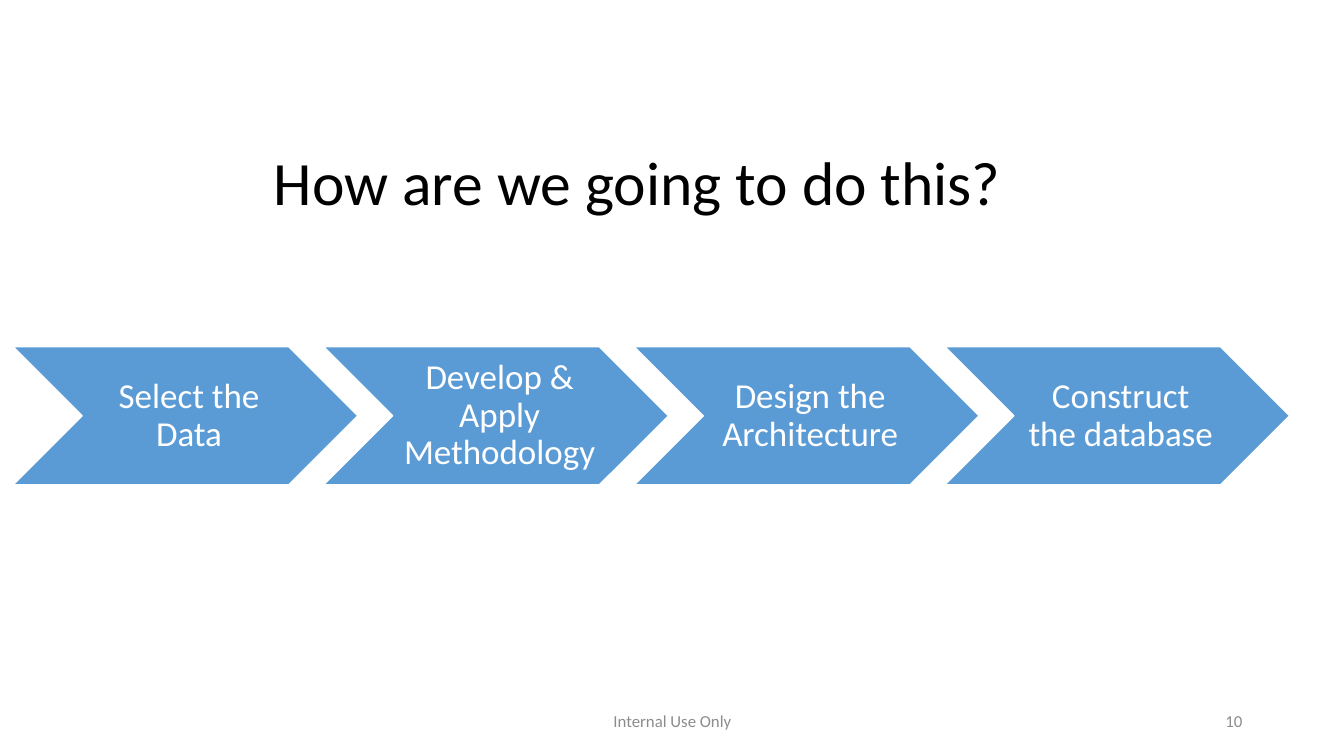
from pptx import Presentation
from pptx.dml.color import RGBColor
from pptx.enum.shapes import MSO_SHAPE
from pptx.enum.text import MSO_ANCHOR, PP_ALIGN
from pptx.util import Inches, Pt

FONT = "Calibri"
STEPS = [
    "Select the Data",
    "Develop & Apply Methodology",
    "Design the Architecture",
    "Construct the database",
]


def color(value):
    return RGBColor.from_string(value)


def write_text(shape, text, size, text_color, alignment=PP_ALIGN.CENTER, line_spacing=1.0):
    text_frame = shape.text_frame
    text_frame.text = text
    text_frame.word_wrap = True
    text_frame.vertical_anchor = MSO_ANCHOR.MIDDLE
    paragraph = text_frame.paragraphs[0]
    paragraph.alignment = alignment
    paragraph.line_spacing = line_spacing
    for run in paragraph.runs:
        run.font.name = FONT
        run.font.size = Pt(size)
        run.font.color.rgb = color(text_color)


def set_title(slide, text):
    title = slide.shapes.title
    title.left, title.top = Inches(-0.34), Inches(1.06)
    title.width, title.height = Inches(13.33), Inches(1.57)
    write_text(title, text, 44, "000000", line_spacing=0.9)


def add_step(slide, left, text):
    chevron = slide.shapes.add_shape(
        MSO_SHAPE.CHEVRON, Inches(left), Inches(3.44), Inches(3.42), Inches(1.37)
    )
    chevron.shadow.inherit = False
    chevron.fill.solid()
    chevron.fill.fore_color.rgb = color("5B9BD5")
    chevron.line.color.rgb = color("FFFFFF")
    chevron.line.width = Pt(1)
    write_text(chevron, text, 25, "FFFFFF", line_spacing=0.9)
    text_frame = chevron.text_frame
    text_frame.margin_left = Inches(0.11)
    text_frame.margin_right = Inches(0.04)
    text_frame.margin_top = text_frame.margin_bottom = Inches(0.04)


def add_footer(slide, left, width, text, alignment):
    footer = slide.shapes.add_textbox(Inches(left), Inches(6.95), Inches(width), Inches(0.4))
    write_text(footer, text, 12, "8C8C8C", alignment)


def main():
    presentation = Presentation()
    presentation.slide_width = Inches(13.33)
    presentation.slide_height = Inches(7.5)
    slide = presentation.slides.add_slide(presentation.slide_layouts[5])
    set_title(slide, "How are we going to do this?")
    for index, step in enumerate(STEPS):
        add_step(slide, 0.13 + 3.08 * index, step)
    add_footer(slide, 4.42, 4.5, "Internal Use Only", PP_ALIGN.CENTER)
    add_footer(slide, 9.42, 3, "10", PP_ALIGN.RIGHT)
    presentation.save("out.pptx")


if __name__ == "__main__":
    main()
